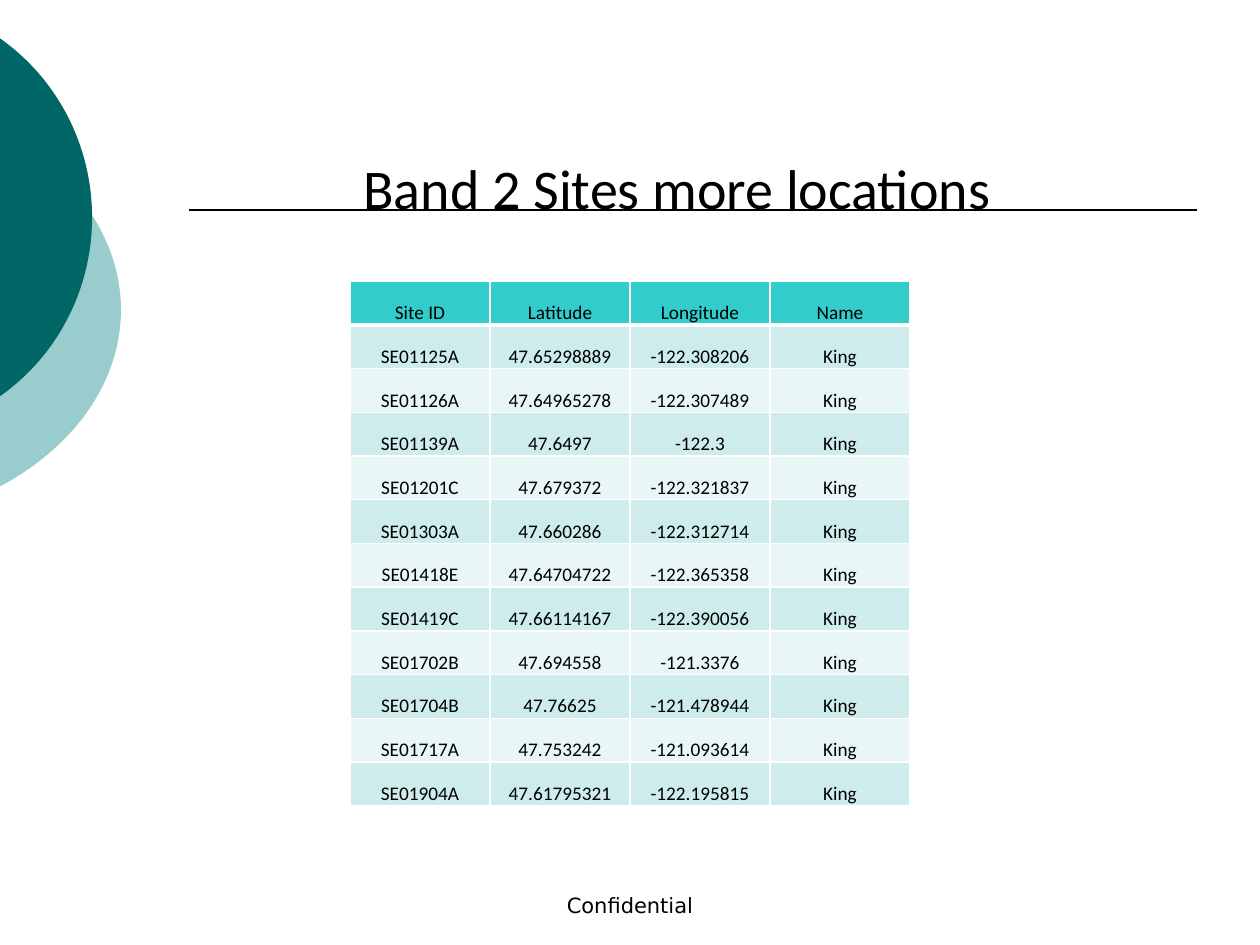
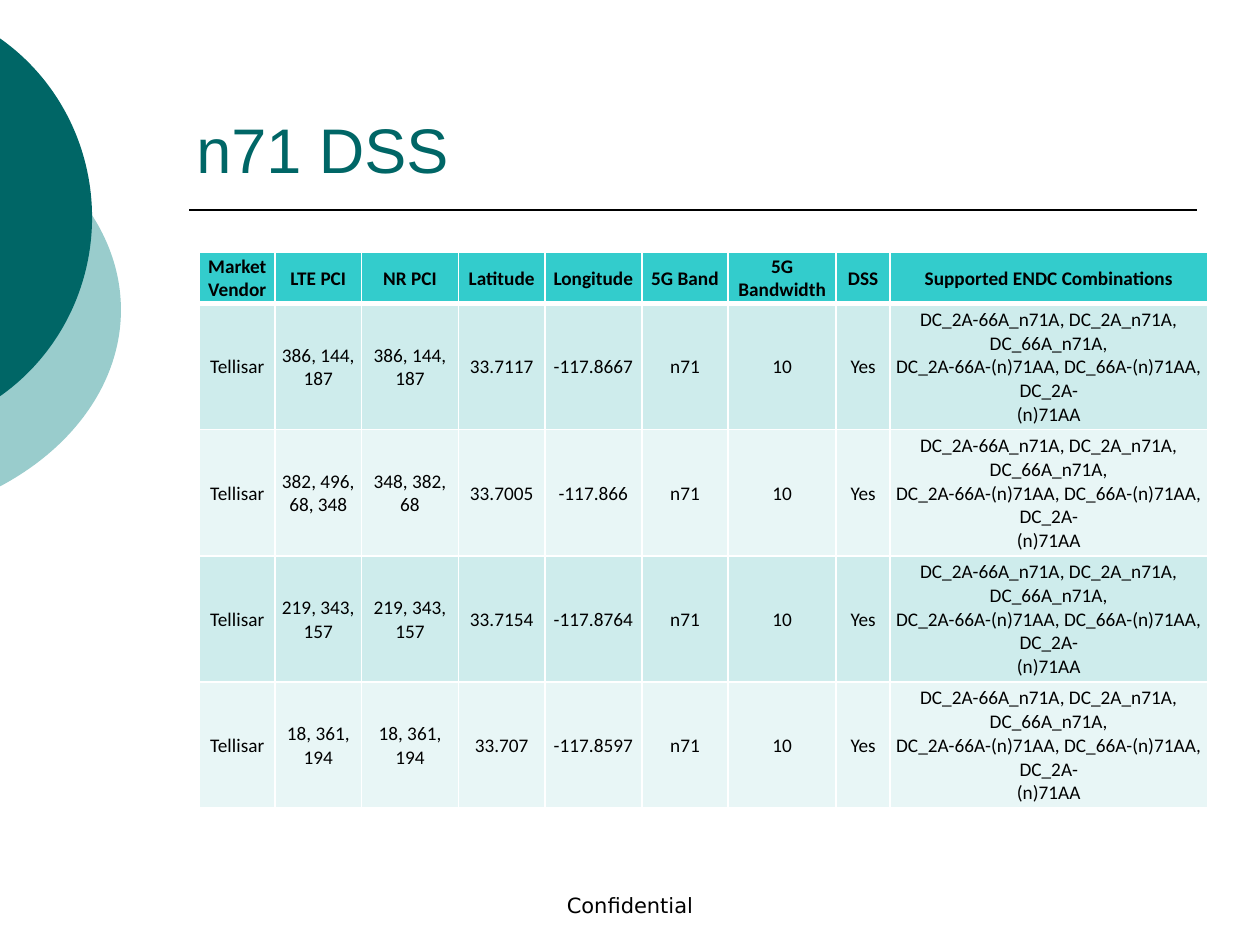
from dataclasses import dataclass

from lxml import etree
from pptx import Presentation
from pptx.dml.color import RGBColor
from pptx.enum.shapes import MSO_CONNECTOR, MSO_SHAPE
from pptx.enum.text import MSO_ANCHOR as Anchor
from pptx.enum.text import MSO_AUTO_SIZE as AutoSize
from pptx.enum.text import PP_ALIGN as Align
from pptx.oxml.ns import qn
from pptx.util import Pt


@dataclass(frozen=True)
class Theme:
    black: str = "000000"
    white: str = "FFFFFF"
    teal: str = "006666"
    pale_teal: str = "99CCCC"
    header_fill: str = "33CCCC"
    band_fills: tuple = ("CEECEC", "E8F6F6")
    table_font: str = "Calibri"
    heading_font: str = "Arial"
    footer_font: str = "DejaVu Sans"
    centred_title_size: float = 32
    title_size: float = 36
    footer_size: float = 12
    table_size: float = 11
    thin_line: float = 1
    header_line: float = 3


THEME = Theme()
TITLE_LEFT, TITLE_WIDTH, TITLE_HEIGHT = 105, 564, 63.4

SITE_HEADER = ["Site ID", "Latitude", "Longitude", "Name"]
SITES = [
    ("SE01125A", "47.65298889", "-122.308206"),
    ("SE01126A", "47.64965278", "-122.307489"),
    ("SE01139A", "47.6497", "-122.3"),
    ("SE01201C", "47.679372", "-122.321837"),
    ("SE01303A", "47.660286", "-122.312714"),
    ("SE01418E", "47.64704722", "-122.365358"),
    ("SE01419C", "47.66114167", "-122.390056"),
    ("SE01702B", "47.694558", "-121.3376"),
    ("SE01704B", "47.76625", "-121.478944"),
    ("SE01717A", "47.753242", "-121.093614"),
    ("SE01904A", "47.61795321", "-122.195815"),
]
COUNTY = "King"

DSS_HEADER = ["Market Vendor", "LTE PCI", "NR PCI", "Latitude", "Longitude",
              "5G Band", "5G Bandwidth", "DSS", "Supported ENDC Combinations"]
DSS_COLUMN_WIDTHS = [43.2, 49.4, 55.4, 49.4, 55.4, 49.4, 61.7, 30.9, 181.2]
DSS_CELLS = [
    ("386, 144, 187", "386, 144, 187", "33.7117", "-117.8667"),
    ("382, 496, 68, 348", "348, 382, 68", "33.7005", "-117.866"),
    ("219, 343, 157", "219, 343, 157", "33.7154", "-117.8764"),
    ("18, 361, 194", "18, 361, 194", "33.707", "-117.8597"),
]
VENDOR = "Tellisar"
ENDC_COMBINATIONS = """DC_2A-66A_n71A, DC_2A_n71A, DC_66A_n71A,
DC_2A-66A-(n)71AA, DC_66A-(n)71AA, DC_2A-
(n)71AA"""


def rgb(colour):
    return RGBColor.from_string(colour)


def format_text(text_frame, font_name, size, colour, align=Align.CENTER, bold=False):
    for paragraph in text_frame.paragraphs:
        paragraph.alignment = align
        for run in paragraph.runs:
            run.font.name = font_name
            run.font.size = Pt(size)
            run.font.bold = bold
            run.font.color.rgb = rgb(colour)


def add_disc(slide, left, top, width, height, colour):
    disc = slide.shapes.add_shape(MSO_SHAPE.OVAL, Pt(left), Pt(top), Pt(width), Pt(height))
    disc.shadow.inherit = False
    disc.fill.solid()
    disc.fill.fore_color.rgb = rgb(colour)
    disc.line.fill.background()
    return disc


def add_title_rule(slide):
    rule = slide.shapes.add_connector(MSO_CONNECTOR.STRAIGHT, Pt(108), Pt(120), Pt(684), Pt(120))
    rule.line.color.rgb = rgb(THEME.black)
    rule.line.width = Pt(THEME.thin_line)
    etree.SubElement(rule.element.spPr, qn("a:effectLst"))
    return rule


def move_decoration_to_layout(slide):
    """Draw the shared discs and rule, then hand them to the slide's layout."""
    decoration = [
        add_disc(slide, -254.9, 54, 324, 246.2, THEME.pale_teal),
        add_disc(slide, -190.8, 0, 243.4, 248.4, THEME.teal),
        add_title_rule(slide),
    ]
    for shape in decoration:
        slide.slide_layout.shapes.element.append(shape.element)


def set_title(slide, text, top, font_name, size, colour, align):
    title = slide.shapes.title
    title.left, title.top = Pt(TITLE_LEFT), Pt(top)
    title.width, title.height = Pt(TITLE_WIDTH), Pt(TITLE_HEIGHT)
    text_frame = title.text_frame
    text_frame.text = text
    text_frame.auto_size = AutoSize.NONE
    text_frame.vertical_anchor = Anchor.BOTTOM
    format_text(text_frame, font_name, size, colour, align)


def add_footer(slide):
    footer = slide.shapes.add_textbox(Pt(246), Pt(492), Pt(228), Pt(36))
    text_frame = footer.text_frame
    text_frame.word_wrap = True
    text_frame.vertical_anchor = Anchor.BOTTOM
    text_frame.text = "Confidential"
    format_text(text_frame, THEME.footer_font, THEME.footer_size, THEME.black)


def set_borders(cell, top, bottom):
    """Give a cell white borders; top and bottom are line widths in points."""
    properties = cell._tc.get_or_add_tcPr()
    widths = {"a:lnL": THEME.thin_line, "a:lnR": THEME.thin_line, "a:lnT": top, "a:lnB": bottom}
    for tag, width in widths.items():
        line = etree.SubElement(properties, qn(tag), w=str(Pt(width)))
        fill = etree.SubElement(line, qn("a:solidFill"))
        etree.SubElement(fill, qn("a:srgbClr"), val=THEME.white)


def format_cell(cell, text, row_index, anchor, bold_header):
    is_header = row_index == 0
    set_borders(cell,
                top=THEME.header_line if row_index == 1 else THEME.thin_line,
                bottom=THEME.header_line if is_header else THEME.thin_line)
    cell.fill.solid()
    fill = THEME.header_fill if is_header else THEME.band_fills[(row_index - 1) % 2]
    cell.fill.fore_color.rgb = rgb(fill)
    cell.margin_left = cell.margin_right = cell.margin_top = Pt(0.7)
    cell.margin_bottom = 0
    cell.vertical_anchor = anchor
    cell.text_frame.text = text
    format_text(cell.text_frame, THEME.table_font, THEME.table_size, THEME.black,
                bold=is_header and bold_header)


def add_table(slide, rows, left, top, column_widths, row_heights, anchor, bold_header=False):
    table = slide.shapes.add_table(len(rows), len(column_widths), Pt(left), Pt(top),
                                   Pt(sum(column_widths)), Pt(sum(row_heights))).table
    table.horz_banding = False
    for column, width in zip(table.columns, column_widths):
        column.width = Pt(width)
    for row_index, (row, values) in enumerate(zip(table.rows, rows)):
        row.height = Pt(row_heights[row_index])
        for cell, text in zip(row.cells, values):
            format_cell(cell, text, row_index, anchor, bold_header)


def fill_sites_slide(slide):
    set_title(slide, "Band 2 Sites more locations", 66.6, THEME.table_font,
              THEME.centred_title_size, THEME.black, Align.CENTER)
    add_footer(slide)
    rows = [SITE_HEADER] + [(*site, COUNTY) for site in SITES]
    add_table(slide, rows, 200, 160.7, [80] * len(SITE_HEADER), [25] * len(rows), Anchor.BOTTOM)


def fill_dss_slide(slide):
    set_title(slide, "n71 DSS", 46.3, THEME.heading_font,
              THEME.title_size, THEME.teal, Align.LEFT)
    add_footer(slide)
    rows = [DSS_HEADER] + [(VENDOR, *cells, "n71", "10", "Yes", ENDC_COMBINATIONS)
                           for cells in DSS_CELLS]
    add_table(slide, rows, 114, 144, DSS_COLUMN_WIDTHS, [29.5] + [72.1] * len(DSS_CELLS),
              Anchor.MIDDLE, bold_header=True)


def main():
    presentation = Presentation()
    presentation.slide_width, presentation.slide_height = Pt(720), Pt(540)
    title_only = presentation.slide_layouts.get_by_name("Title Only")
    sites_slide = presentation.slides.add_slide(title_only)
    move_decoration_to_layout(sites_slide)
    fill_sites_slide(sites_slide)
    fill_dss_slide(presentation.slides.add_slide(title_only))
    presentation.save("out.pptx")


if __name__ == "__main__":
    main()
